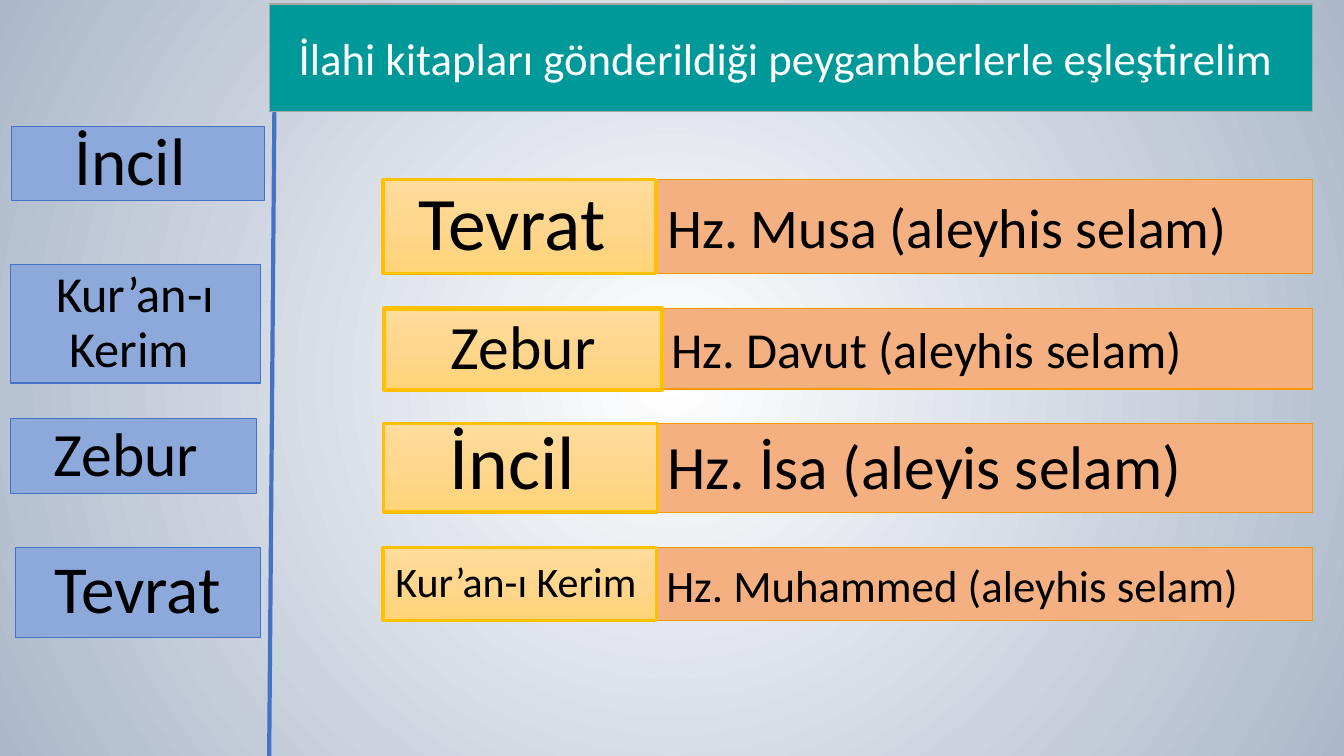
from lxml import etree
from pptx import Presentation, util as u
from pptx.dml.color import RGBColor
from pptx.enum import shapes, text
from pptx.oxml.ns import qn

PX = 9144
FONT = "Calibri"
C = {"title": "009999", "title_line": "A5A5A5", "white": "FFFFFF", "black": "000000",
     "blue": "8DA9DB", "blue_line": "4472C4", "prophet": "F4B081", "prophet_line": "FF9900",
     "gold_line": "FFC000"}
BACKGROUND = [(0, "FFFFFF"), (100, "ACB8CA")]
GOLD = [(0, "FFDC9B"), (50, "FFD68D"), (100, "FFD478")]

TITLE = ("İlahi kitapları gönderildiği peygamberlerle eşleştirelim ", 32, (267, 4, 1035, 107))
CHOICES = [
    ("Kur’an-ı Kerim ", 36, (10, 262, 248, 118)),
    ("İncil ", 48, (11, 126, 251, 73)),
    ("Zebur ", 44, (10, 415, 244, 75)),
    ("Tevrat", 48, (15, 543, 243, 89)),
]
MIDDLE, TOP = text.MSO_ANCHOR.MIDDLE, text.MSO_ANCHOR.TOP
RIGHT = 1302
BOOK_LEFT = 381
PAIRS = [
    {"book": ("Tevrat ", 54, 0.9), "prophet": ("Hz. Musa (aleyhis selam)", 40, MIDDLE),
     "y": 178, "h": 93, "split": 652, "book_box": (178, 271, 93), "frame": (379, 271, 93, 2.25)},
    {"book": ("Zebur", 44, 0.9), "prophet": ("Hz. Davut (aleyhis selam)", 36, MIDDLE),
     "y": 306, "h": 80, "split": 656, "book_box": (308, 276, 78), "frame": (381, 276, 81, 3)},
    {"book": ("İncil ", 54, 0.8), "prophet": ("Hz. İsa (aleyis selam)", 44, TOP),
     "y": 420, "h": 88, "split": 652, "book_box": (420, 271, 88), "frame": (380, 272, 88, 2.25)},
    {"book": ("Kur’an-ı Kerim ", 30, 0.9), "prophet": ("Hz. Muhammed (aleyhis selam)", 32, MIDDLE),
     "y": 543, "h": 73, "split": 651, "book_box": (543, 271, 73), "frame": (379, 272, 73, 2.25)},
]


def rgb(name):
    return RGBColor.from_string(C[name])


def set_gradient(fill, owner, stops, radial=False):
    fill.gradient()
    grad = owner.find(".//" + qn("a:gradFill"))
    for child in list(grad):
        grad.remove(child)
    gs_list = etree.SubElement(grad, qn("a:gsLst"))
    for pos, color in stops:
        gs = etree.SubElement(gs_list, qn("a:gs"), pos=str(pos * 1000))
        etree.SubElement(gs, qn("a:srgbClr"), val=color)
    if radial:
        circle = etree.SubElement(grad, qn("a:path"), path="circle")
        etree.SubElement(circle, qn("a:fillToRect"), l="50000", t="50000", r="50000", b="50000")
    else:
        etree.SubElement(grad, qn("a:lin"), ang="5400000", scaled="0")


def add_box(s, box, fill, line, width=0.75):
    sp = s.shapes.add_shape(shapes.MSO_SHAPE.RECTANGLE, *(v * PX for v in box))
    sp.shadow.inherit = False
    if fill is None:
        sp.fill.background()
    elif isinstance(fill, list):
        set_gradient(sp.fill, sp.element, fill)
    else:
        sp.fill.solid()
        sp.fill.fore_color.rgb = rgb(fill)
    sp.line.color.rgb = rgb(line)
    sp.line.width = u.Pt(width)
    return sp


def write(sp, words, size, color="black", align=text.PP_ALIGN.CENTER, spacing=1.0, anchor=MIDDLE):
    tf = sp.text_frame
    tf.word_wrap = True
    tf.vertical_anchor = anchor
    tf.text = words
    p = tf.paragraphs[0]
    p.alignment = align
    p.line_spacing = spacing
    r = p.runs[0]
    r.font.name = FONT
    r.font.size = u.Pt(size)
    r.font.color.rgb = rgb(color)


def add_divider(s):
    line = s.shapes.add_connector(shapes.MSO_CONNECTOR.STRAIGHT, 273 * PX, 4 * PX, 267 * PX, 750 * PX)
    line.line.color.rgb = rgb("blue_line")
    line.line.width = u.Pt(3)
    etree.SubElement(line.element.spPr, qn("a:effectLst"))


def main():
    prs = Presentation()
    prs.slide_width, prs.slide_height = 1333 * PX, 750 * PX
    s = prs.slides.add_slide(prs.slide_layouts[6])
    set_gradient(s.background.fill, s.element, BACKGROUND, radial=True)

    for words, size, box in CHOICES:
        write(add_box(s, box, "blue", "blue_line"), words, size, spacing=0.9)
    add_divider(s)

    for pair in PAIRS:
        words, size, anchor = pair["prophet"]
        x = pair["split"]
        sp = add_box(s, (x, pair["y"], RIGHT - x, pair["h"]), "prophet", "prophet_line")
        write(sp, words, size, align=text.PP_ALIGN.LEFT, anchor=anchor)

        words, size, spacing = pair["book"]
        sp = add_box(s, (BOOK_LEFT, *pair["book_box"]), GOLD, "gold_line")
        write(sp, words, size, spacing=spacing)

        x, w, h, weight = pair["frame"]
        add_box(s, (x, pair["y"], w, h), None, "gold_line", weight)

    words, size, box = TITLE
    write(add_box(s, box, "title", "title_line"), words, size, color="white")
    prs.save("out.pptx")


if __name__ == "__main__":
    main()
